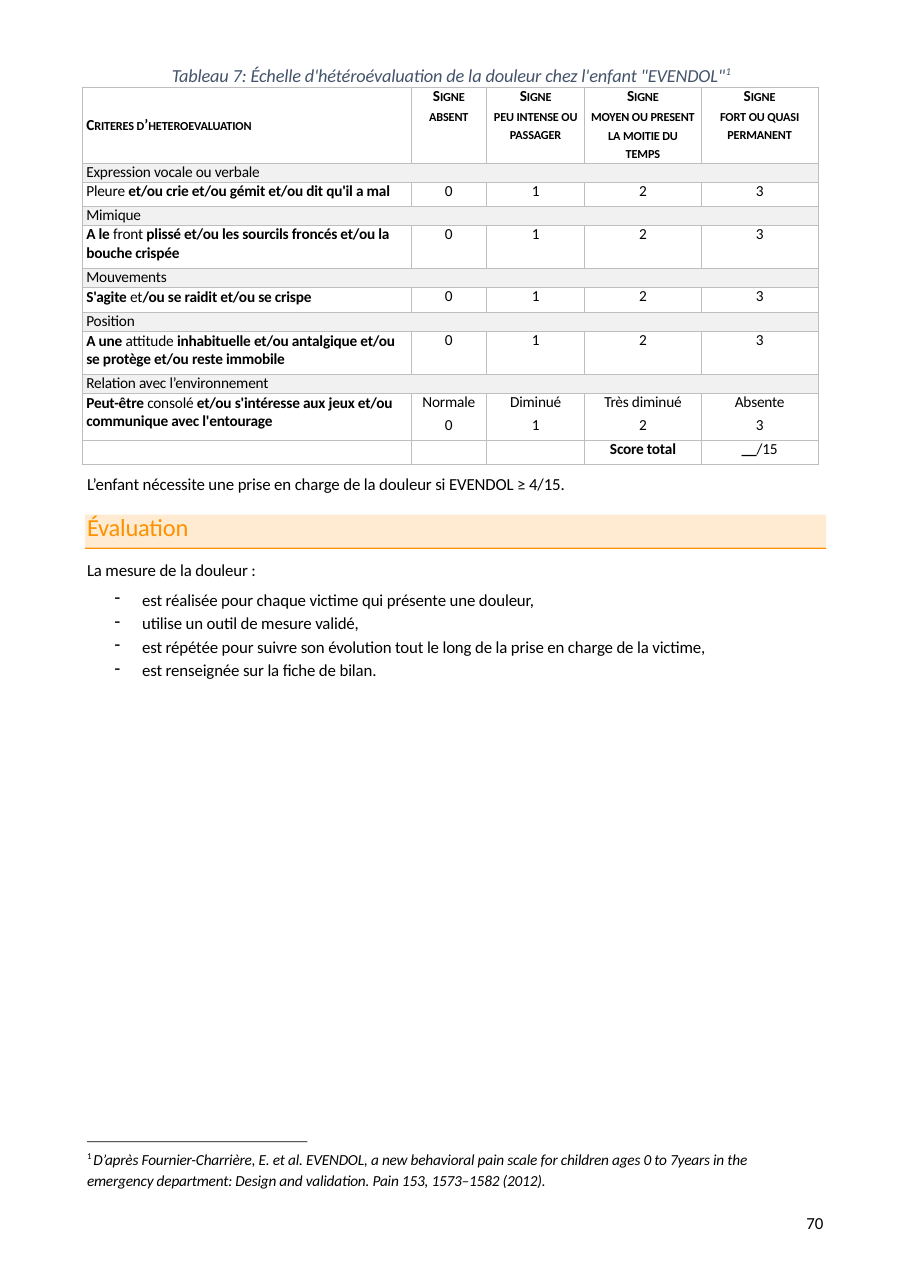
from lxml import etree
from pptx import Presentation
from pptx.dml.color import RGBColor
from pptx.enum.shapes import MSO_SHAPE
from pptx.enum.text import MSO_ANCHOR, PP_ALIGN
from pptx.oxml.ns import qn
from pptx.util import Inches, Pt

LEFT, CENTER = PP_ALIGN.LEFT, PP_ALIGN.CENTER
MIDDLE, RECT = MSO_ANCHOR.MIDDLE, MSO_SHAPE.RECTANGLE
FONT = "Calibri"
BLACK, SLATE, ORANGE = "000000", "44536A", "FD9100"
PEACH, SHADE, BORDER = "FFEBD1", "F1F1F1", "BEBEBE"

PAGE_W, PAGE_H = 8.26, 11.69
BOXES = {
    "caption": (18.4, 4.88, 63.8, 1.97),
    "table": (9, 6.76, 80.9, 29.34),
    "band": (9.32, 39.95, 81.48, 2.57),
    "band rule": (9.32, 42.51, 81.48, 0.11),
    "body": (9.32, 36.7, 81.48, 16.25),
    "note rule": (9.56, 88.62, 24.21, 0.06),
    "note": (9.08, 89.05, 76.5, 3.42),
    "page": (88.14, 94.35, 2.9, 1.54),
}

CAPTION = "Tableau 7: Échelle d'hétéroévaluation de la douleur chez l'enfant \"EVENDOL\"^1^"
CRITERIA_HEAD = "C~RITERES D~’~HETEROEVALUATION~"
SIGN = "S~IGNE~"
LEVELS = [
    (["~ABSENT~"], 0),
    (["~PEU INTENSE OU PASSAGER~"], 0.06),
    (["~MOYEN OU PRESENT~", "~LA MOITIE DU TEMPS~"], 0),
    (["~FORT OU QUASI PERMANENT~"], 0.16),
]
SCORES = [["0"], ["1"], ["2"], ["3"]]
RELATION = [["Normale", "0"], ["Diminué", "1"], ["Très diminué", "2"], ["Absente", "3"]]
CRITERIA = [
    ("Expression vocale ou verbale",
     ["Pleure *et/ou crie et/ou gémit et/ou dit qu'il a mal*"], SCORES),
    ("Mimique",
     ["*A le *front *plissé et/ou les sourcils froncés et/ou la*", "*bouche crispée*"], SCORES),
    ("Mouvements",
     ["*S'agite *et*/ou se raidit et/ou se crispe*"], SCORES),
    ("Position",
     ["*A une *attitude *inhabituelle et/ou antalgique et/ou se protège et/ou reste immobile*"], SCORES),
    ("Relation avec l’environnement",
     ["*Peut-être *consolé *et/ou s'intéresse aux jeux et/ou communique avec l'entourage*"], RELATION),
]
TOTAL = [[], [], [], ["*Score total*"], ["*__*/15"]]
COL_SHARES = [44.69, 10.31, 13.3, 15.85, 15.85]
ROW_WEIGHTS = [76, 19, 24, 19, 43, 19, 25, 19, 43, 19, 47, 24]

THRESHOLD = "L’enfant nécessite une prise en charge de la douleur si EVENDOL ≥ 4/15."
HEADING = "Évaluation"
INTRO = "La mesure de la douleur :"
BULLETS = [
    "est réalisée pour chaque victime qui présente une douleur,",
    "utilise un outil de mesure validé,",
    "est répétée pour suivre son évolution tout le long de la prise en charge de la victime,",
    "est renseignée sur la fiche de bilan.",
]
NOTE = ("^1 ^D’après Fournier-Charrière, E. et al. EVENDOL, a new behavioral pain scale for children "
        "ages 0 to 7years in the emergency department: Design and validation. "
        "Pain 153, 1573–1582 (2012).")
PAGE = "70"


def rgb(value):
    return RGBColor.from_string(value)


def place(name):
    x, y, w, h = BOXES[name]
    return [Inches(v / 100 * side) for v, side in zip((x, y, w, h), (PAGE_W, PAGE_H) * 2)]


def write(tf, text, size=10, color=BLACK, mark="*", bold=False, italic=False,
          align=LEFT, before=0, line=None, indent=0, right=0, hang=0):
    p = tf.paragraphs[0] if not tf.text else tf.add_paragraph()
    p.alignment, p.space_before = align, Pt(before)
    if line:
        p.line_spacing = line
    pPr = p._p.get_or_add_pPr()
    for key, value in (("marL", indent), ("marR", right), ("indent", hang)):
        pPr.set(key, str(Inches(value)))
    for i, part in enumerate(text.split(mark)):
        if not part:
            continue
        marked = i % 2 == 1
        r = p.add_run()
        r.text = part
        f = r.font
        f.name, f.color.rgb, f.italic = FONT, rgb(color), italic
        f.size = Pt(8 if marked and mark == "~" else size)
        f.bold = bold or (marked and mark == "*")
        rPr = r._r.get_or_add_rPr()
        rPr.set("spc", "-10")
        if marked and mark == "^":
            rPr.set("baseline", "38000")
    return p


def text_box(name, top=0.01):
    tf = s.shapes.add_textbox(*place(name)).text_frame
    tf.word_wrap = True
    tf.margin_left = tf.margin_right = tf.margin_bottom = 0
    tf.margin_top = Inches(top)
    return tf


def bar(name, color):
    sp = s.shapes.add_shape(RECT, *place(name))
    sp.shadow.inherit = False
    sp.fill.solid()
    sp.fill.fore_color.rgb = rgb(color)
    sp.line.fill.background()


def style_cell(cell, shaded):
    cell.margin_left = cell.margin_right = cell.margin_top = cell.margin_bottom = 0
    tcPr = cell._tc.get_or_add_tcPr()
    for side in ("lnL", "lnR", "lnT", "lnB"):
        ln = etree.SubElement(tcPr, qn("a:" + side), w=str(Pt(0.5)))
        fill = etree.SubElement(ln, qn("a:solidFill"))
        etree.SubElement(fill, qn("a:srgbClr"), val=BORDER)
    if shaded:
        cell.fill.solid()
        cell.fill.fore_color.rgb = rgb(SHADE)
    else:
        cell.fill.background()
    if not cell.text_frame.text:
        p = cell.text_frame.paragraphs[0]
        etree.SubElement(p._p, qn("a:endParaRPr"), sz="1000")


def centered(cell, lines):
    for i, text in enumerate(lines):
        write(cell.text_frame, text, align=CENTER, before=3.1 * i, line=Pt(11.8))


def build_table():
    x, y, w, h = place("table")
    rows, cols = len(ROW_WEIGHTS), len(COL_SHARES)
    table = s.shapes.add_table(rows, cols, x, y, w, h).table
    table.first_row = table.horz_banding = False
    for column, share in zip(table.columns, COL_SHARES):
        column.width = int(w * share / 100)
    for row, weight in zip(table.rows, ROW_WEIGHTS):
        row.height = int(h * weight / sum(ROW_WEIGHTS))

    head = table.cell(0, 0)
    head.vertical_anchor = MIDDLE
    write(head.text_frame, CRITERIA_HEAD, mark="~", bold=True, indent=0.04)
    for c, (lines, side) in enumerate(LEVELS, 1):
        tf = table.cell(0, c).text_frame
        write(tf, SIGN, mark="~", bold=True, align=CENTER, line=Pt(11.8))
        for i, text in enumerate(lines):
            inset = 0.2 if i else side
            write(tf, text, mark="~", bold=True, align=CENTER, before=0.4,
                  line=Pt(12.2), indent=inset, right=inset)

    for i, (category, signs, scores) in enumerate(CRITERIA):
        r = 1 + 2 * i
        table.cell(r, 0).merge(table.cell(r, cols - 1))
        write(table.cell(r, 0).text_frame, category, indent=0.04, line=Pt(11.7))
        for text in signs:
            write(table.cell(r + 1, 0).text_frame, text, indent=0.04, line=Pt(12.2))
        for c, lines in enumerate(scores, 1):
            centered(table.cell(r + 1, c), lines)
    for c, lines in enumerate(TOTAL):
        centered(table.cell(rows - 1, c), lines)

    for r in range(rows):
        for c in range(cols):
            style_cell(table.cell(r, c), r % 2 == 1 and r < rows - 1)


def build_body():
    tf = text_box("body")
    write(tf, THRESHOLD, 11, before=0.9, indent=0.02)
    write(tf, HEADING, 16, ORANGE, before=12.1, indent=0.02)
    write(tf, INTRO, 11, before=11.6, indent=0.02)
    for i, text in enumerate(BULLETS):
        p = write(tf, text, 11, before=2.2 if i else 6.2, indent=0.52, hang=-0.25)
        etree.SubElement(p._p.get_or_add_pPr(), qn("a:buChar"), char="-")


prs = Presentation()
prs.slide_width, prs.slide_height = Inches(PAGE_W), Inches(PAGE_H)
s = prs.slides.add_slide(prs.slide_layouts[6])

write(text_box("caption"), CAPTION, 12, SLATE, mark="^", italic=True, before=1, indent=0.04)
build_table()
bar("band", PEACH)
bar("band rule", ORANGE)
build_body()
bar("note rule", BLACK)
note = write(text_box("note"), NOTE, mark="^", italic=True, before=1, line=1.12, indent=0.04)
note.runs[0].font.italic = False
write(text_box("page", 0), PAGE, 11, line=Pt(11.4), indent=0.04)

prs.save("out.pptx")
